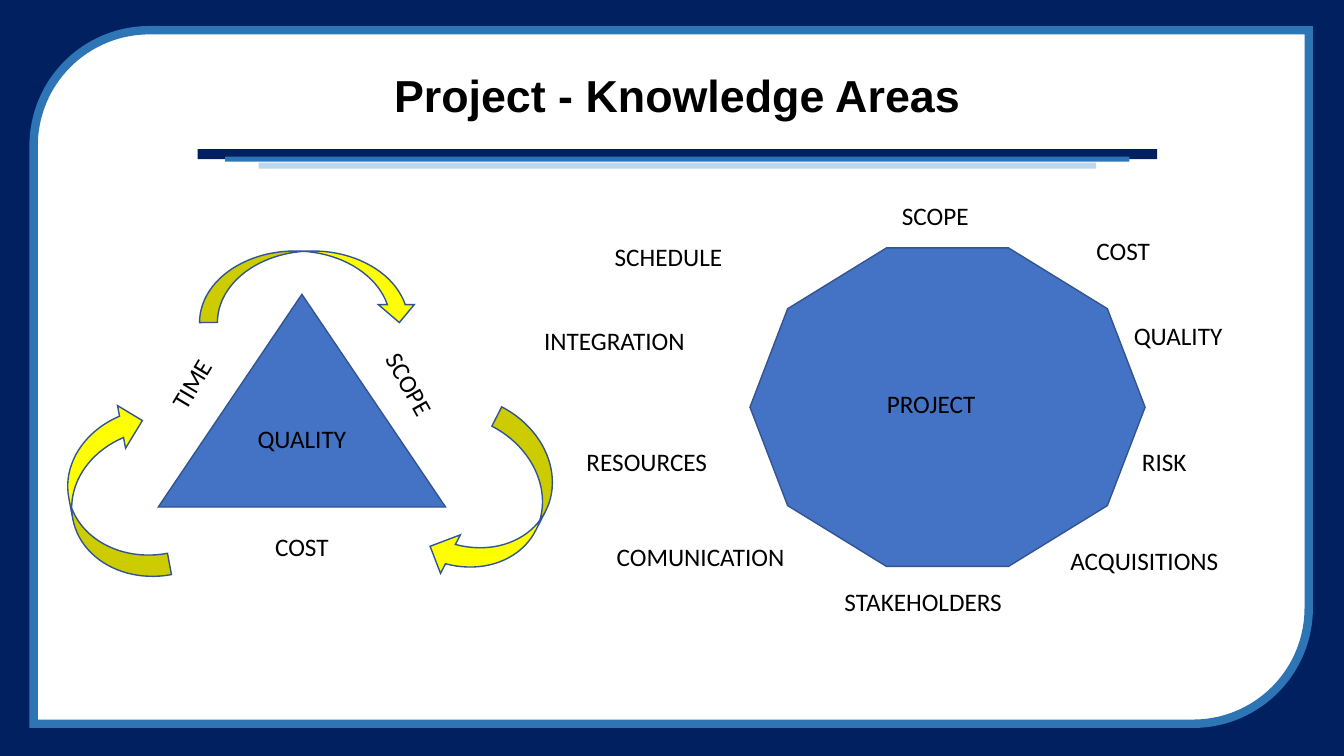
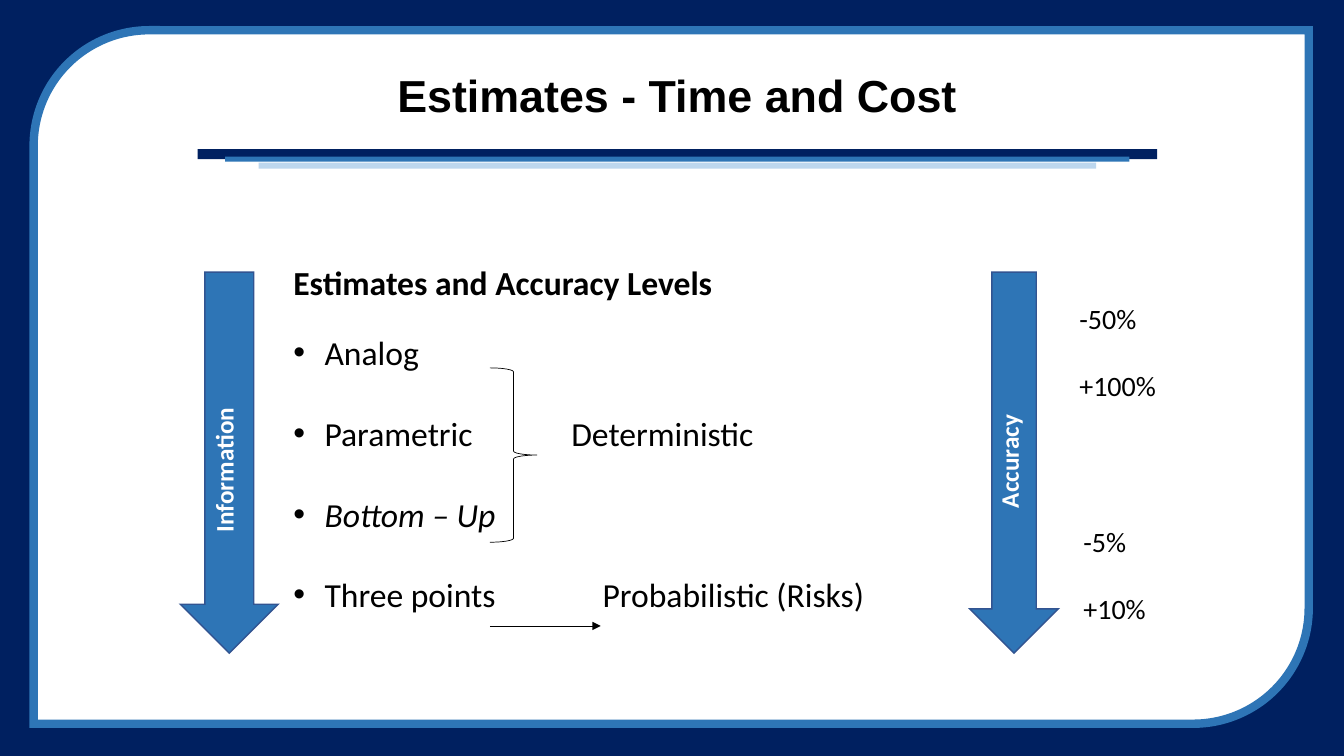
from pptx import Presentation
from pptx import util as u
from pptx.dml.color import RGBColor
from pptx.enum import shapes, text
from pptx.oxml import ns
from lxml import etree

# Grid of square cells: 40 columns by 22.5 rows
COLUMNS, ROWS = 40, 22.5
CELL = u.Inches(1 / 3)

NAVY = RGBColor(0x00, 0x20, 0x60)
BLUE = RGBColor(0x2E, 0x75, 0xB6)
PALE_BLUE = RGBColor(0xBD, 0xD7, 0xEE)
SHAPE_BLUE = RGBColor(0x44, 0x72, 0xC4)
OUTLINE = RGBColor(0x32, 0x54, 0x91)
YELLOW = RGBColor(0xFF, 0xFF, 0x00)
WHITE = RGBColor(0xFF, 0xFF, 0xFF)
BLACK = RGBColor(0x00, 0x00, 0x00)

TITLE_FONT, BODY_FONT = "Arial", "Calibri"
AXIS = 20.16  # column on which the title and its bands are centred
TITLE_WIDTH = 28.56
LABEL_HEIGHT = 1.2

TITLE_BANDS = [  # top, width, height, colour
    (4.44, TITLE_WIDTH, 0.3, NAVY),
    (4.66, 26.91, 0.15, BLUE),
    (4.84, 24.93, 0.18, PALE_BLUE),
]
TRIANGLE_LABELS = [  # text, left, top, width, rotation
    ("TIME", 3.75, 10.83, 3.87, 300.7),
    ("COST", 6.63, 15.66, 4.71, 0),
    ("SCOPE", 10.26, 10.83, 3.87, 60.6),
    ("QUALITY", 6.33, 12.45, 5.31, 0),
]
CYCLE_ARROWS = [  # left, top, width, height, rotation
    (0.69, 13.44, 5.31, 2.58, 259.3),
    (5.94, 7.47, 6.48, 2.13, 0),
    (12.21, 13.77, 5.31, 2.58, 117.2),
]
PROJECT_LABELS = [  # text, left, top
    ("SCOPE", 26.55, 5.82),
    ("COST", 32.34, 6.87),
    ("SCHEDULE", 18, 7.03),
    ("INTEGRATION", 15.9, 9.54),
    ("RESOURCES", 17.16, 13.14),
    ("COMUNICATION", 18.06, 15.96),
    ("STAKEHOLDERS", 24.84, 17.29),
    ("QUALITY", 33.45, 9.39),
    ("RISK", 33.69, 13.14),
    ("ACQUISITIONS", 31.56, 16.08),
    ("PROJECT", 26.1, 11.41),
]


def cells(*lengths):
    return [round(length * CELL) for length in lengths]


def place(shape, *box):
    shape.left, shape.top, shape.width, shape.height = cells(*box)


def set_font(paragraph, size, name=BODY_FONT, color=BLACK, bold=False, italic=False):
    font = paragraph.font
    font.size, font.name = u.Pt(size), name
    font.bold, font.italic = bold, italic
    font.color.rgb = color


def add_figure(slide, kind, box, fill=None, line=None, line_width=1, rotation=0):
    shape = slide.shapes.add_shape(kind, *cells(*box))
    shape.shadow.inherit = False
    shape.rotation = rotation
    if fill is None:
        shape.fill.background()
    else:
        shape.fill.solid()
        shape.fill.fore_color.rgb = fill
    if line is None:
        shape.line.fill.background()
    else:
        shape.line.color.rgb = line
        shape.line.width = u.Pt(line_width)
        outline = shape.element.spPr.find(ns.qn("a:ln"))
        etree.SubElement(outline, ns.qn("a:miter"), lim="800000")
    return shape


def add_label(slide, lines, box, size=18, align=text.PP_ALIGN.LEFT, gap=0, **font):
    """Add a text box with one paragraph per line, gap points apart."""
    label = slide.shapes.add_textbox(*cells(*box))
    frame = label.text_frame
    frame.word_wrap = True
    frame.text = "\n".join(lines)
    for index, paragraph in enumerate(frame.paragraphs):
        paragraph.alignment = align
        paragraph.space_before = u.Pt(gap if index else 0)
        set_font(paragraph, size, **font)
    return label


def add_arrow(slide, start, end):
    connector = slide.shapes.add_connector(
        shapes.MSO_CONNECTOR.STRAIGHT, *cells(*start, *end))
    connector.line.color.rgb = BLACK
    connector.line.width = u.Pt(0.5)
    properties = connector.element.spPr
    outline = properties.find(ns.qn("a:ln"))
    etree.SubElement(outline, ns.qn("a:tailEnd"), type="triangle")
    etree.SubElement(properties, ns.qn("a:effectLst"))


def add_master_frame(presentation, slide):
    """Draw the frame and title bands on the slide, then move them to the master."""
    rectangle = shapes.MSO_SHAPE.RECTANGLE
    frame = [
        add_figure(slide, rectangle, (0, 0, COLUMNS, ROWS), NAVY),
        add_figure(slide, shapes.MSO_SHAPE.ROUND_2_DIAG_RECTANGLE,
                   (1, 0.9, 37.95, 20.64), WHITE, BLUE, 6),
    ]
    for top, width, height, color in TITLE_BANDS:
        box = (AXIS - width / 2, top, width, height)
        frame.append(add_figure(slide, rectangle, box, color))
    tree = presentation.slide_master.shapes.element
    for position, shape in enumerate(frame, start=2):
        tree.insert(position, shape.element)


def add_slide(presentation, layout, title):
    slide = presentation.slides.add_slide(presentation.slide_layouts[layout])
    shape = slide.shapes.title
    place(shape, AXIS - TITLE_WIDTH / 2, 1.47, TITLE_WIDTH, 2.91)
    frame = shape.text_frame
    frame.text = title
    frame.vertical_anchor = text.MSO_ANCHOR.MIDDLE
    frame.auto_size = text.MSO_AUTO_SIZE.NONE
    paragraph = frame.paragraphs[0]
    paragraph.alignment = text.PP_ALIGN.CENTER
    paragraph.line_spacing = 0.9
    set_font(paragraph, 32, TITLE_FONT, bold=True)
    return slide


def set_bullet(paragraph, bullet):
    properties = paragraph._p.get_or_add_pPr()
    indent = u.Inches(0.31) if bullet else 0
    properties.set("marL", str(indent))
    properties.set("indent", str(-indent))
    if bullet:
        etree.SubElement(properties, ns.qn("a:buFont"), typeface="Arial")
        etree.SubElement(properties, ns.qn("a:buChar"), char="•")
    else:
        etree.SubElement(properties, ns.qn("a:buNone"))


def fill_estimates(body):
    place(body, 8.43, 7.65, 20.55, 10.92)
    frame = body.text_frame
    frame.auto_size = text.MSO_AUTO_SIZE.NONE
    frame.vertical_anchor = text.MSO_ANCHOR.TOP
    lines = ["Estimates and Accuracy Levels", "Analog", "Parametric",
             "Bottom – Up", "Three points"]
    gaps = [0, 21.3, 28.8, 28.8, 28.8]
    frame.text = "\n".join(lines)
    for index, (paragraph, gap) in enumerate(zip(frame.paragraphs, gaps)):
        set_bullet(paragraph, bullet=index > 0)
        paragraph.space_before = u.Pt(gap)
        set_font(paragraph, 24, bold=index == 0, italic=index == 3)


def draw_knowledge_areas(slide):
    add_figure(slide, shapes.MSO_SHAPE.ISOSCELES_TRIANGLE,
               (4.71, 8.76, 8.55, 6.33), SHAPE_BLUE, OUTLINE)
    for name, left, top, width, rotation in TRIANGLE_LABELS:
        label = add_label(slide, [name], (left, top, width, LABEL_HEIGHT),
                          align=text.PP_ALIGN.CENTER)
        label.rotation = rotation
    for *box, rotation in CYCLE_ARROWS:
        add_figure(slide, shapes.MSO_SHAPE.CURVED_DOWN_ARROW, box,
                   YELLOW, OUTLINE, rotation=rotation)
    add_figure(slide, shapes.MSO_SHAPE.DECAGON,
               (22.32, 7.38, 11.76, 9.48), SHAPE_BLUE, OUTLINE)
    for name, left, top in PROJECT_LABELS:
        add_label(slide, [name], (left, top, 6, LABEL_HEIGHT))


def add_level_arrow(slide, name, left, width, label_left, label_top):
    """Add a tall down arrow with its name reading upwards."""
    add_figure(slide, shapes.MSO_SHAPE.DOWN_ARROW,
               (left, 8.1, width, 11.34), BLUE, OUTLINE)
    label = add_label(slide, [name], (label_left, label_top, 1.5, 5.37),
                      color=WHITE, bold=True)
    label.element.txBody.find(ns.qn("a:bodyPr")).set("vert", "vert270")


def draw_estimates(slide):
    fill_estimates(slide.placeholders[1])
    add_label(slide, ["Deterministic"], (16.71, 12.15, 9, 1.53), size=24)
    add_label(slide, ["Probabilistic (Risks)"], (17.64, 16.93, 9, 1.53), size=24)
    add_figure(slide, shapes.MSO_SHAPE.RIGHT_BRACE,
               (14.58, 10.95, 1.41, 5.19), line=BLACK, line_width=0.5)
    add_arrow(slide, (14.58, 18.63), (17.88, 18.63))
    add_level_arrow(slide, "Information", 5.37, 2.91, 6.06, 10.77)
    add_level_arrow(slide, "Accuracy", 28.86, 2.64, 29.43, 10.05)
    for limits, left, top in [(["-50%", "+100%"], 31.83, 8.82),
                              (["-5%", "+10%"], 31.95, 15.45)]:
        add_label(slide, limits, (left, top, 4.5, 3.33), size=20, gap=24)


def main():
    presentation = Presentation()
    presentation.slide_width, presentation.slide_height = cells(COLUMNS, ROWS)
    areas = add_slide(presentation, 5, "Project - Knowledge Areas")
    add_master_frame(presentation, areas)
    draw_knowledge_areas(areas)
    draw_estimates(add_slide(presentation, 1, "Estimates - Time and Cost"))
    presentation.save("out.pptx")


if __name__ == "__main__":
    main()
